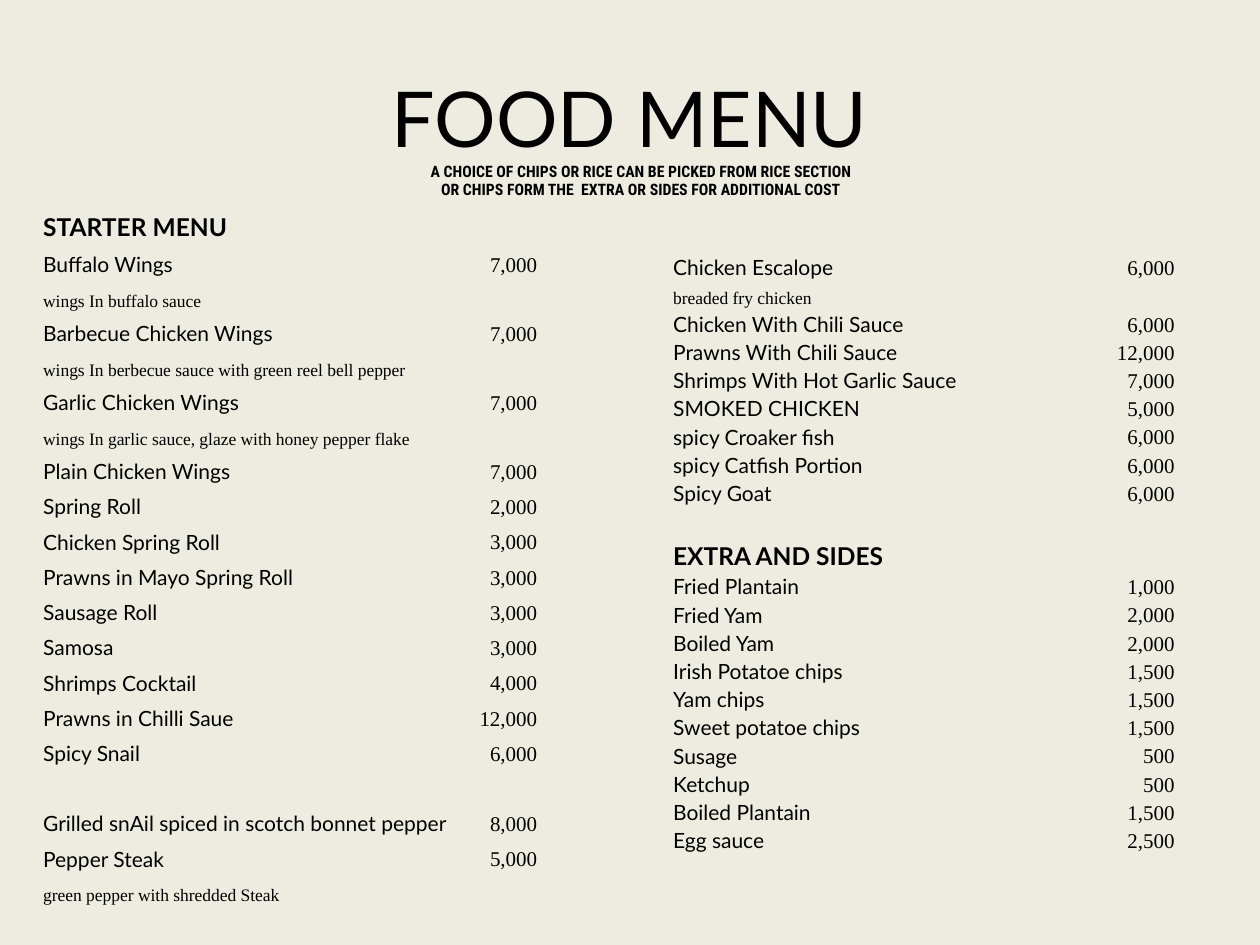
from lxml import etree
from pptx import Presentation
from pptx.dml.color import RGBColor
from pptx.enum.text import MSO_ANCHOR as ANCHOR, PP_ALIGN as ALIGN
from pptx.oxml.ns import qn
from pptx.util import Cm, Pt

COLORS = {"paper": "EEECE1", "ink": "000000"}
PLAIN_TABLE = "{2D5ABB26-0587-4C30-8999-92F81FD0307C}"
SANS, SERIF = "Lato", "Times New Roman"

FORMATS = {
    "title": {"size": Pt(44), "name": SANS},
    "notice": {"size": Pt(9), "name": "Roboto Condensed", "bold": True},
    "heading": {"size": Pt(14), "name": SANS, "bold": True},
    "item": {"size": Pt(12), "name": SANS},
    "note": {"size": Pt(10), "name": SERIF},
    "price": {"size": Pt(12), "name": SERIF},
}

NOTICE = ("A CHOICE OF CHIPS OR RICE CAN BE PICKED FROM RICE SECTION "
          "OR CHIPS FORM THE  EXTRA OR SIDES FOR ADDITIONAL COST")

# Each row: kind, text, price
STARTERS = [
    ("heading", "STARTER MENU", ""),
    ("item", "Buffalo Wings", "7,000"),
    ("note", "wings In buffalo sauce", ""),
    ("item", "Barbecue Chicken Wings", "7,000"),
    ("note", "wings In berbecue sauce with green reel bell pepper", ""),
    ("item", "Garlic Chicken Wings", "7,000"),
    ("note", "wings In garlic sauce, glaze with honey pepper flake", ""),
    ("item", "Plain Chicken Wings", "7,000"),
    ("item", "Spring Roll", "2,000"),
    ("item", "Chicken Spring Roll", "3,000"),
    ("item", "Prawns in Mayo Spring Roll", "3,000"),
    ("item", "Sausage Roll", "3,000"),
    ("item", "Samosa", "3,000"),
    ("item", "Shrimps Cocktail", "4,000"),
    ("item", "Prawns in Chilli Saue", "12,000"),
    ("item", "Spicy Snail", "6,000"),
    ("item", "Grilled snAil spiced in scotch bonnet pepper", "8,000"),
    ("item", "Pepper Steak", "5,000"),
    ("note", "green pepper with shredded Steak", ""),
]
MAINS = [
    ("item", "Chicken Escalope", "6,000"),
    ("note", "breaded fry chicken", ""),
    ("item", "Chicken With Chili Sauce", "6,000"),
    ("item", "Prawns With Chili Sauce", "12,000"),
    ("item", "Shrimps With Hot Garlic Sauce", "7,000"),
    ("item", "SMOKED CHICKEN", "5,000"),
    ("item", "spicy Croaker fish", "6,000"),
    ("item", "spicy Catfish Portion", "6,000"),
    ("item", "Spicy Goat", "6,000"),
]
EXTRAS = [
    ("heading", "EXTRA AND SIDES", ""),
    ("item", "Fried Plantain", "1,000"),
    ("item", "Fried Yam", "2,000"),
    ("item", "Boiled Yam", "2,000"),
    ("item", "Irish Potatoe chips", "1,500"),
    ("item", "Yam chips", "1,500"),
    ("item", "Sweet potatoe chips", "1,500"),
    ("item", "Susage", "500"),
    ("item", "Ketchup", "500"),
    ("item", "Boiled Plantain", "1,500"),
    ("item", "Egg sauce", "2,500"),
]
STARTER_HEIGHTS = {"heading": 0.86, "item": 0.71, "note": 0.68}
COMPACT_HEIGHTS = {"heading": 0.71, "item": 0.57, "note": 0.57}
SPACED_ITEM = "Grilled snAil spiced in scotch bonnet pepper"


class MenuSlide:
    def __init__(self, prs):
        self.s = prs.slides.add_slide(prs.slide_layouts[6])
        fill = self.s.background.fill
        fill.solid()
        fill.fore_color.rgb = RGBColor.from_string(COLORS["paper"])

    def put_text(self, tf, text, kind, align):
        p = tf.paragraphs[0]
        p.alignment = align
        r = p.add_run()
        r.text = text
        for attr, value in FORMATS[kind].items():
            setattr(r.font, attr, value)
        r.font.color.rgb = RGBColor.from_string(COLORS["ink"])

    def text(self, box, text, kind):
        tf = self.s.shapes.add_textbox(*map(Cm, box)).text_frame
        tf.word_wrap = True
        tf.vertical_anchor = ANCHOR.MIDDLE
        self.put_text(tf, text, kind, ALIGN.CENTER)

    def table(self, left, top, widths, heights):
        """Add a table without borders or fills and return it."""
        frame = self.s.shapes.add_table(
            len(heights), len(widths), Cm(left), Cm(top),
            Cm(sum(widths)), Cm(sum(heights)))
        tbl = frame.table
        tbl.first_row = tbl.horz_banding = False
        tbl._tbl.tblPr.find(qn("a:tableStyleId")).text = PLAIN_TABLE
        for col, width in zip(tbl.columns, widths):
            col.width = Cm(width)
        for row, height in zip(tbl.rows, heights):
            row.height = Cm(height)
        for cell in tbl.iter_cells():
            cell.fill.background()
            cell.vertical_anchor = ANCHOR.BOTTOM
            cell.margin_left = cell.margin_right = cell.margin_top = Cm(0.02)
            cell.margin_bottom = 0
        return tbl

    def notice(self, left, top, width, height, text):
        tbl = self.table(left, top, [width], [height])
        self.put_text(tbl.cell(0, 0).text_frame, text, "notice", ALIGN.CENTER)

    def price_list(self, left, top, widths, rows, heights):
        row_heights = [heights[kind] * (2 if name == SPACED_ITEM else 1)
                       for kind, name, _ in rows]
        tbl = self.table(left, top, widths, row_heights)
        for i, (kind, name, price) in enumerate(rows):
            self.put_text(tbl.cell(i, 0).text_frame, name, kind, ALIGN.LEFT)
            tf = tbl.cell(i, 1).text_frame
            if price:
                self.put_text(tf, price, "price", ALIGN.RIGHT)
            else:  # a small empty line keeps the row from growing
                etree.SubElement(tf.paragraphs[0]._p, qn("a:endParaRPr"), sz="1000")


def main():
    prs = Presentation()
    prs.slide_width, prs.slide_height = Cm(25.4), Cm(19.05)
    menu = MenuSlide(prs)
    menu.text((1.27, 0.76, 22.86, 3.18), "FOOD MENU", "title")
    menu.notice(8.47, 3.18, 8.89, 0.84, NOTICE)
    menu.price_list(0.85, 4.02, (8.33, 1.67), STARTERS, STARTER_HEIGHTS)
    menu.price_list(13.55, 5.08, (8.46, 1.69), MAINS, COMPACT_HEIGHTS)
    menu.price_list(13.55, 10.8, (8.46, 1.69), EXTRAS, COMPACT_HEIGHTS)
    prs.save("out.pptx")


if __name__ == "__main__":
    main()
